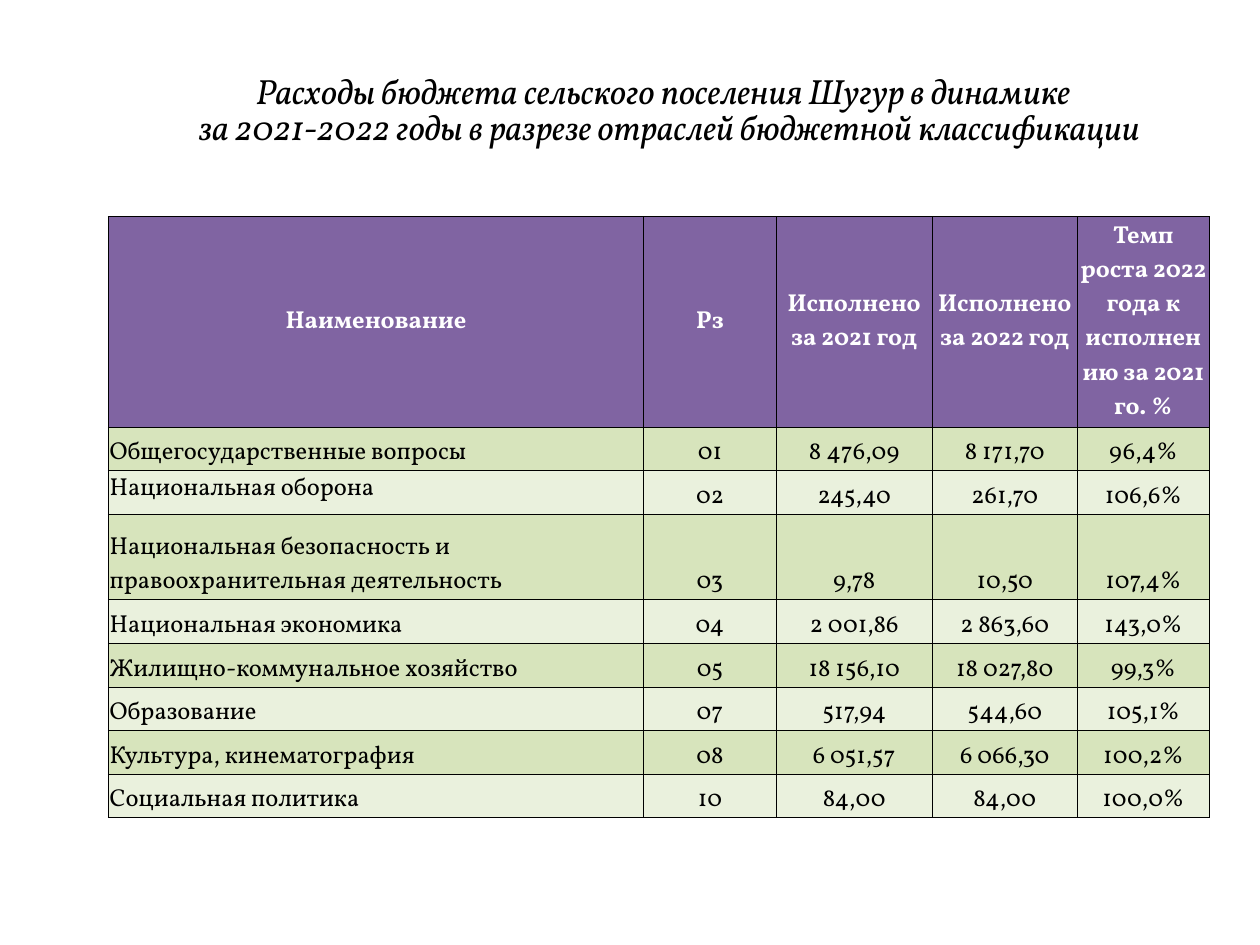
from dataclasses import dataclass

from lxml.etree import SubElement
from pptx import Presentation
from pptx.dml.color import RGBColor as Color
from pptx.enum.text import MSO_ANCHOR as Anchor, MSO_AUTO_SIZE as AutoSize, PP_ALIGN as Align
from pptx.oxml.ns import qn
from pptx.util import Inches, Pt


@dataclass(frozen=True)
class Theme:
    font: str = "Vollkorn"
    title_size: int = 20
    table_size: int = 14
    text: str = "000000"
    title_outline: str = "7030A0"
    header_text: str = "FFFFFF"
    header_fill: str = "8064A2"
    band_fills: tuple = ("D7E4BC", "EAF1DD")
    border: str = "000000"
    line_width: float = 0.5


THEME = Theme()
TITLE_LINES = [
    "Расходы бюджета сельского поселения Шугур в динамике ",
    " за 2021-2022 годы в разрезе отраслей бюджетной классификации",
]
HEADERS = [
    "Наименование",
    "Рз",
    "Исполнено за 2021 год",
    "Исполнено за 2022 год",
    "Темп роста 2022 года к исполнению за 2021 го. %",
]
EXPENSES = [
    ("Общегосударственные вопросы", "01", "8 476,09", "8 171,70", "96,4%"),
    ("Национальная оборона", "02", "245,40", "261,70", "106,6%"),
    ("Национальная безопасность и правоохранительная деятельность",
     "03", "9,78", "10,50", "107,4%"),
    ("Национальная экономика", "04", "2 001,86", "2 863,60", "143,0%"),
    ("Жилищно-коммунальное хозяйство", "05", "18 156,10", "18 027,80", "99,3%"),
    ("Образование", "07", "517,94", "544,60", "105,1%"),
    ("Культура, кинематография", "08", "6 051,57", "6 066,30", "100,2%"),
    ("Социальная политика", "10", "84,00", "84,00", "100,0%"),
]
COLUMN_WIDTHS = [4.25, 1.05, 1.24, 1.15, 1.05]
TABLE_HEIGHT = 4.77
HEADER_HEIGHT = 1.67
TWO_LINE_HEIGHT = 0.68
TWO_LINE_ROW = 3
TOP_ALIGNED_ROW = 2


def add_line(parent, tag, color):
    line = SubElement(parent, qn(tag), w=str(Pt(THEME.line_width)))
    fill = SubElement(line, qn("a:solidFill"))
    SubElement(fill, qn("a:srgbClr"), val=color)
    return line


def write_text(paragraph, text, size, color=THEME.text, align=Align.LEFT,
               bold=False, italic=False, outline=None, spacing=None):
    paragraph.alignment = align
    if spacing:
        paragraph.line_spacing = spacing
    run = paragraph.add_run()
    run.text = text
    font = run.font
    if outline:
        add_line(font._element, "a:ln", outline)
    font.name, font.size = THEME.font, Pt(size)
    font.bold, font.italic = bold, italic
    font.color.rgb = Color.from_string(color)


def format_title(title):
    title.left, title.top = Inches(1.02), Inches(0.55)
    title.width, title.height = Inches(8.54), Inches(0.77)
    frame = title.text_frame
    frame.word_wrap = True
    frame.auto_size = AutoSize.SHAPE_TO_FIT_TEXT
    frame.vertical_anchor = Anchor.TOP
    for index, text in enumerate(TITLE_LINES):
        paragraph = frame.add_paragraph() if index else frame.paragraphs[0]
        write_text(paragraph, text, THEME.title_size, align=Align.CENTER,
                   italic=True, outline=THEME.title_outline, spacing=0.86)


def format_cell(cell, text, fill, anchor, **text_format):
    cell.margin_left = cell.margin_right = cell.margin_top = Inches(0.01)
    cell.margin_bottom = 0
    cell.vertical_anchor = anchor
    properties = cell._tc.get_or_add_tcPr()
    for side in "LRTB":
        add_line(properties, f"a:ln{side}", THEME.border)
    cell.fill.solid()
    cell.fill.fore_color.rgb = Color.from_string(fill)
    write_text(cell.text_frame.paragraphs[0], text, THEME.table_size, **text_format)


def size_table(table):
    for column, width in zip(table.columns, COLUMN_WIDTHS):
        column.width = Inches(width)
    single_rows = len(EXPENSES) - 1
    single_height = (TABLE_HEIGHT - HEADER_HEIGHT - TWO_LINE_HEIGHT) / single_rows
    special_heights = {0: HEADER_HEIGHT, TWO_LINE_ROW: TWO_LINE_HEIGHT}
    for index, row in enumerate(table.rows):
        row.height = Inches(special_heights.get(index, single_height))


def add_expense_table(slide):
    table = slide.shapes.add_table(
        len(EXPENSES) + 1, len(HEADERS), Inches(0.86), Inches(1.72),
        Inches(sum(COLUMN_WIDTHS)), Inches(TABLE_HEIGHT)).table
    size_table(table)
    for column, text in enumerate(HEADERS):
        format_cell(table.cell(0, column), text, THEME.header_fill, Anchor.MIDDLE,
                    color=THEME.header_text, align=Align.CENTER, bold=True)
    for row, values in enumerate(EXPENSES, start=1):
        fill = THEME.band_fills[(row - 1) % 2]
        for column, text in enumerate(values):
            at_top = column == 0 and row == TOP_ALIGNED_ROW
            format_cell(table.cell(row, column), text, fill,
                        Anchor.TOP if at_top else Anchor.BOTTOM,
                        align=Align.CENTER if column else Align.LEFT)


def main():
    presentation = Presentation()
    presentation.slide_width, presentation.slide_height = Inches(10), Inches(7.5)
    slide = presentation.slides.add_slide(presentation.slide_layouts.get_by_name("Title Only"))
    format_title(slide.shapes.title)
    add_expense_table(slide)
    presentation.save("out.pptx")


if __name__ == "__main__":
    main()
